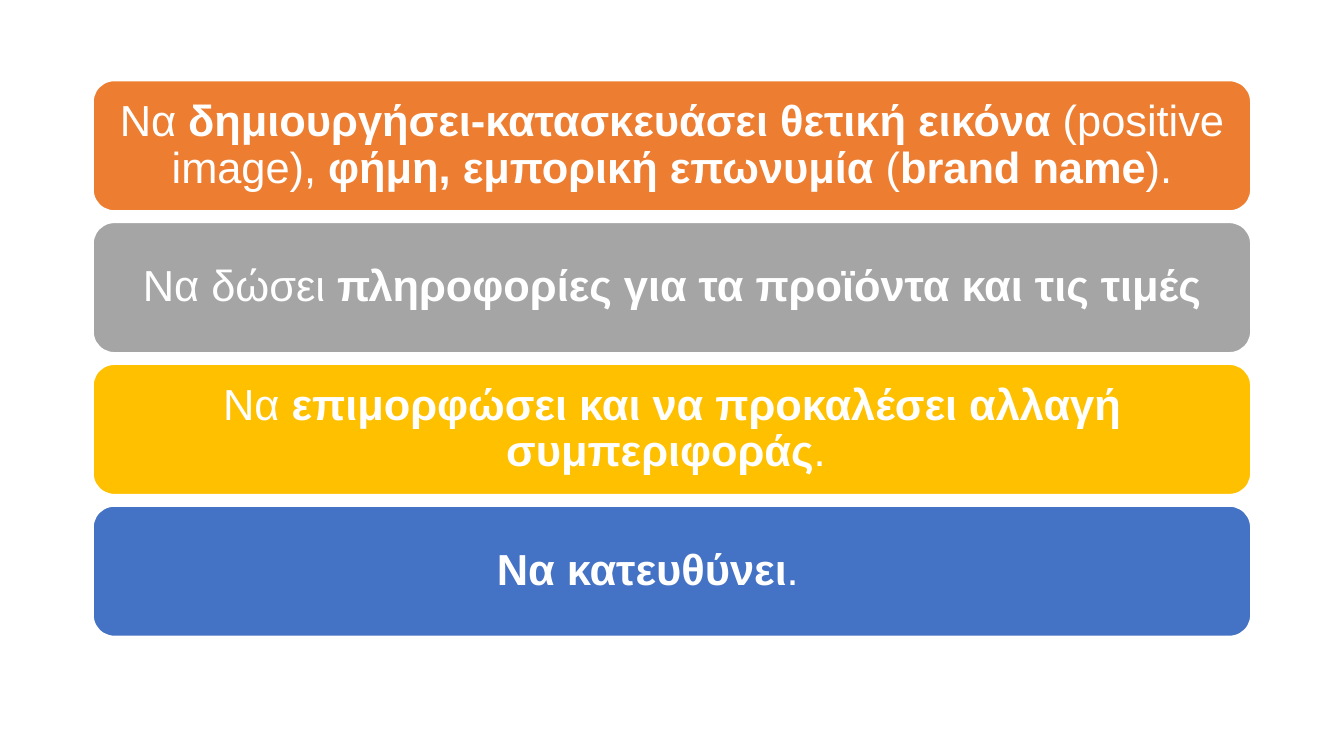
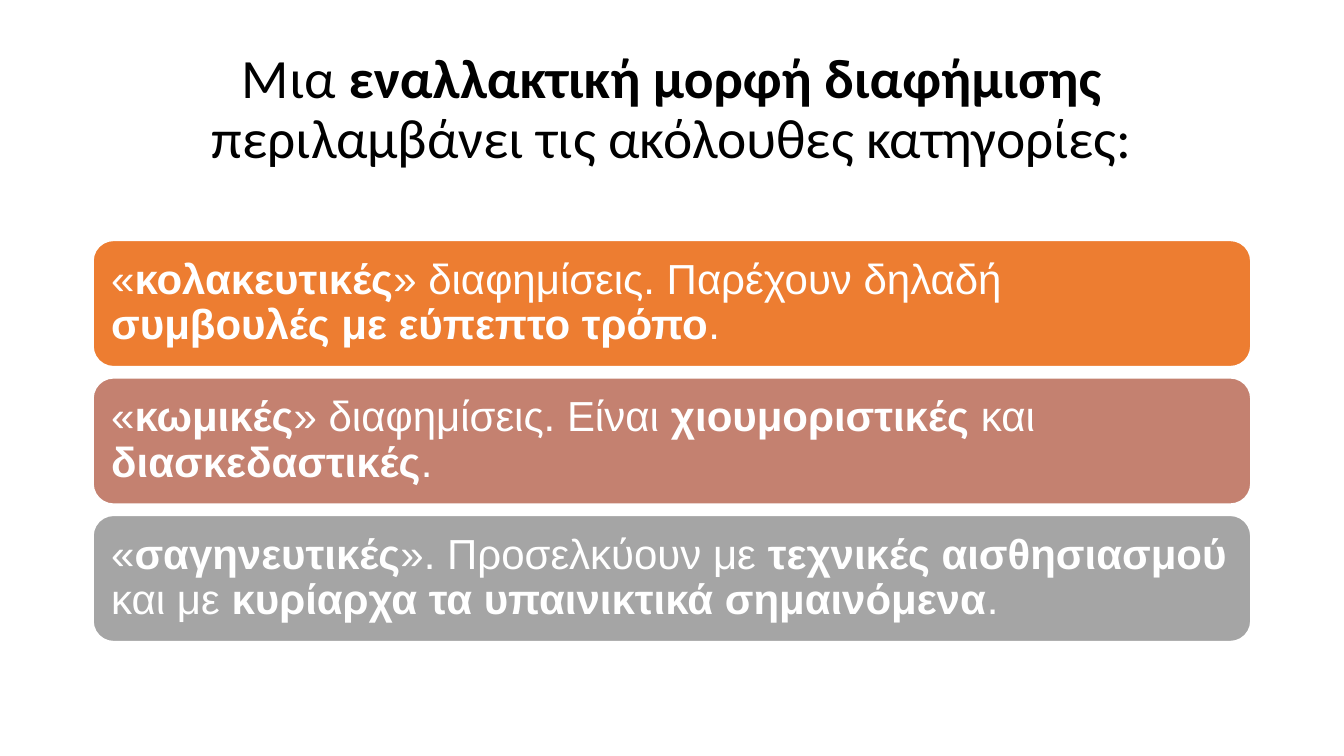
from dataclasses import dataclass

import pptx
import pptx.dml.color
import pptx.enum.shapes
import pptx.enum.text
import pptx.util

Pt = pptx.util.Pt
ALIGN = pptx.enum.text.PP_ALIGN


@dataclass(frozen=True)
class Theme:
    orange: str = "ED7D31"
    grey: str = "A5A5A5"
    gold: str = "FFC000"
    blue: str = "4472C4"
    rose: str = "C48170"
    white: str = "FFFFFF"
    black: str = "000000"
    title_font: str = "Calibri"
    band_font: str = "Arial"
    title_size: float = 39.6
    goal_size: float = 31
    category_size: float = 30
    line_spacing: float = 0.9
    inset_ratio: float = 0.3
    left: float = 66
    width: float = 828


THEME = Theme()

GOALS = [
    (THEME.orange, "Να **δημιουργήσει-κατασκευάσει θετική εικόνα** (positive image), "
                   "**φήμη, εμπορική επωνυμία** (**brand name**).", 0),
    (THEME.grey, "Να δώσει **πληροφορίες για τα προϊόντα και τις τιμές**", 0),
    (THEME.gold, "Να **επιμορφώσει και να προκαλέσει αλλαγή συμπεριφοράς**. ", 0),
    (THEME.blue, "**Να κατευθύνει**.", 34.5),
]

TITLE = "Μια **εναλλακτική μορφή διαφήμισης** περιλαμβάνει τις ακόλουθες κατηγορίες:"

CATEGORIES = [
    (THEME.orange, "«**κολακευτικές**» διαφημίσεις. Παρέχουν δηλαδή "
                   "**συμβουλές με εύπεπτο τρόπο**.", 0),
    (THEME.rose, "«**κωμικές**» διαφημίσεις. Είναι **χιουμοριστικές** και "
                 "**διασκεδαστικές**.", 0),
    (THEME.grey, "«**σαγηνευτικές**». Προσελκύουν με **τεχνικές αισθησιασμού **"
                 "και με **κυρίαρχα τα υπαινικτικά σημαινόμενα**.", 0),
]


def rgb(value):
    return pptx.dml.color.RGBColor.from_string(value)


def write_text(frame, marked_text, font, size, color, align):
    frame.word_wrap = True
    frame.vertical_anchor = pptx.enum.text.MSO_ANCHOR.MIDDLE
    paragraph = frame.paragraphs[0]
    paragraph.alignment = align
    paragraph.line_spacing = THEME.line_spacing
    for index, part in enumerate(marked_text.split("**")):
        if part:
            run = paragraph.add_run()
            run.text = part
            run.font.name = font
            run.font.size = Pt(size)
            run.font.bold = index % 2 == 1
            run.font.color.rgb = rgb(color)


def add_title(slide, marked_text):
    title = slide.shapes.add_textbox(Pt(THEME.left), Pt(27), Pt(THEME.width), Pt(104))
    write_text(title.text_frame, marked_text, THEME.title_font,
               THEME.title_size, THEME.black, ALIGN.CENTER)


def add_band(slide, top, height, fill, marked_text, size, align, extra_right):
    band = slide.shapes.add_shape(
        pptx.enum.shapes.MSO_SHAPE.ROUNDED_RECTANGLE,
        Pt(THEME.left), Pt(top), Pt(THEME.width), Pt(height))
    band.shadow.inherit = False
    band.fill.solid()
    band.fill.fore_color.rgb = rgb(fill)
    band.line.color.rgb = rgb(THEME.white)
    band.line.width = Pt(2)
    frame = band.text_frame
    inset = size * THEME.inset_ratio
    frame.margin_left = frame.margin_top = frame.margin_bottom = Pt(inset)
    frame.margin_right = Pt(inset + extra_right)
    write_text(frame, marked_text, THEME.band_font, size, THEME.white, align)


def add_band_stack(slide, bands, top, height, pitch, size, align):
    for row, (fill, marked_text, extra_right) in enumerate(bands):
        add_band(slide, top + row * pitch, height, fill, marked_text,
                 size, align, extra_right)


def main():
    deck = pptx.Presentation()
    deck.slide_width, deck.slide_height = Pt(960), Pt(540)
    blank = deck.slide_layouts[6]

    goals = deck.slides.add_slide(blank)
    add_band_stack(goals, GOALS, 57.1, 94.1, 101.3, THEME.goal_size, ALIGN.CENTER)

    categories = deck.slides.add_slide(blank)
    add_title(categories, TITLE)
    add_band_stack(categories, CATEGORIES, 171.2, 91.2, 98.2,
                   THEME.category_size, ALIGN.LEFT)

    deck.save("out.pptx")


if __name__ == "__main__":
    main()
